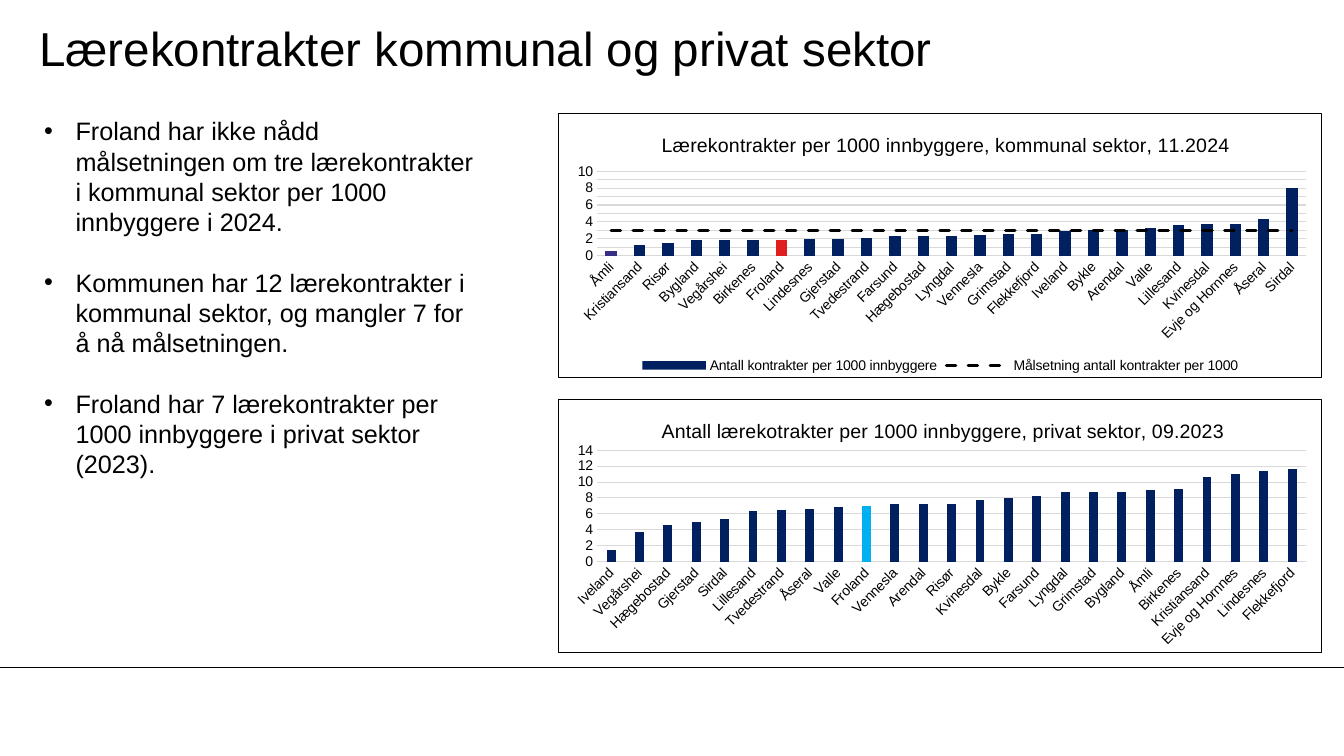
"""Build the slide on apprenticeship contracts in municipal and private sector."""
from lxml.etree import SubElement
from pptx import Presentation
from pptx.chart.data import CategoryChartData
from pptx.dml.color import RGBColor
from pptx.enum.chart import XL_CHART_TYPE, XL_LEGEND_POSITION, XL_MARKER_STYLE, XL_TICK_MARK
from pptx.enum.dml import MSO_LINE
from pptx.enum.shapes import MSO_CONNECTOR
from pptx.enum.text import MSO_ANCHOR, MSO_AUTO_SIZE, PP_ALIGN
from pptx.oxml import parse_xml
from pptx.oxml.ns import nsdecls, qn
from pptx.util import Cm, Pt

FONT, BLACK, GREY, NAVY = "Arial", "000000", "D9D9D9", "002060"
TITLE = "Lærekontrakter kommunal og privat sektor"
POINTS = [
    "Froland har ikke nådd målsetningen om tre lærekontrakter i kommunal sektor per 1000 innbyggere i 2024.",
    "Kommunen har 12 lærekontrakter i kommunal sektor, og mangler 7 for å nå målsetningen.",
    "Froland har 7 lærekontrakter per 1000 innbyggere i privat sektor (2023).",
]
PRIVATE = {
    "title": "Antall lærekotrakter per 1000 innbyggere, privat sektor, 09.2023",
    "name": "Series 1", "top": 10.06, "height": 6.4, "gap": 219, "overlap": -27,
    "max": 14, "unit": 2, "marks": {"Froland": "00B0F0"},
    "head": (0.13, 0.06), "plot": (0.05, 0.2, 0.93, 0.44),
    "rows": {
        "Iveland": 1.5, "Vegårshei": 3.7, "Hægebostad": 4.6, "Gjerstad": 5, "Sirdal": 5.4,
        "Lillesand": 6.3, "Tvedestrand": 6.5, "Åseral": 6.6, "Valle": 6.8, "Froland": 7,
        "Vennesla": 7.2, "Arendal": 7.3, "Risør": 7.3, "Kvinesdal": 7.8, "Bykle": 8,
        "Farsund": 8.2, "Lyngdal": 8.7, "Grimstad": 8.7, "Bygland": 8.8, "Åmli": 9,
        "Birkenes": 9.1, "Kristiansand": 10.6, "Evje og Hornnes": 11, "Lindesnes": 11.4,
        "Flekkefjord": 11.6,
    },
}
PUBLIC = {
    "title": "Lærekontrakter per 1000 innbyggere, kommunal sektor, 11.2024",
    "name": "Antall kontrakter per 1000 innbyggere",
    "top": 2.84, "height": 6.68, "gap": 150, "overlap": 0,
    "max": 10, "unit": 1, "marks": {"Åmli": "352D86", "Froland": "DF1F1D"},
    "head": (0.13, 0.06), "plot": (0.05, 0.22, 0.93, 0.32),
    "goal": ("Målsetning antall kontrakter per 1000", 3),
    "rows": {
        "Åmli": 0.6, "Kristiansand": 1.3, "Risør": 1.5, "Bygland": 1.8, "Vegårshei": 1.8,
        "Birkenes": 1.8, "Froland": 1.9, "Lindesnes": 2, "Gjerstad": 2, "Tvedestrand": 2.1,
        "Farsund": 2.3, "Hægebostad": 2.3, "Lyngdal": 2.3, "Vennesla": 2.5, "Grimstad": 2.6,
        "Flekkefjord": 2.6, "Iveland": 2.9, "Bykle": 3, "Arendal": 3, "Valle": 3.3,
        "Lillesand": 3.6, "Kvinesdal": 3.7, "Evje og Hornnes": 3.8, "Åseral": 4.3, "Sirdal": 8,
    },
}


def rgb(code):
    return RGBColor.from_string(code)


def style(font, size):
    font.name, font.size, font.bold = FONT, Pt(size), False
    font.color.rgb = rgb(BLACK)


def stroke(line, code, width=0.75):
    line.color.rgb = rgb(code)
    line.width = Pt(width)


def place(shape, left, top, width, height):
    shape.left, shape.top, shape.width, shape.height = map(Cm, (left, top, width, height))


def lay(node, index, inner, spots):
    for old in node.findall(qn("c:layout")):
        node.remove(old)
    layout = parse_xml(f"<c:layout {nsdecls('c')}/>")
    node.insert(index, layout)
    manual = SubElement(layout, qn("c:manualLayout"))
    if inner:
        SubElement(manual, qn("c:layoutTarget")).set("val", "inner")
    for tag in ("xMode", "yMode"):
        SubElement(manual, qn("c:" + tag)).set("val", "edge")
    for tag, spot in zip("xywh", spots):
        SubElement(manual, qn("c:" + tag)).set("val", str(spot))


def add_goal(chart):
    bars = chart.plots[0]
    group = parse_xml(
        f'<c:lineChart {nsdecls("c")}><c:grouping val="standard"/>'
        '<c:varyColors val="0"/><c:marker val="1"/></c:lineChart>')
    root = chart._chartSpace
    bar = root.xpath(".//c:barChart")[0]
    ser = bar.findall(qn("c:ser"))[1]
    for flag in ser.findall(qn("c:invertIfNegative")):
        ser.remove(flag)
    group.insert(2, ser)
    for axis in bar.findall(qn("c:axId")):
        SubElement(group, qn("c:axId")).set("val", axis.get("val"))
    bar.addnext(group)
    goal = chart.plots[1].series[0]
    goal.smooth = False
    goal.marker.style = XL_MARKER_STYLE.NONE
    stroke(goal.format.line, BLACK, 2.25)
    goal.format.line.dash_style = MSO_LINE.DASH
    ser.xpath("./c:spPr/a:ln")[0].set("cap", "rnd")


def add_graph(slide, spec_):
    rows = spec_["rows"]
    data = CategoryChartData()
    data.categories = list(rows)
    data.add_series(spec_["name"], list(rows.values()))
    if "goal" in spec_:
        name, level = spec_["goal"]
        data.add_series(name, [level] * len(rows))
    chart = slide.shapes.add_chart(
        XL_CHART_TYPE.COLUMN_CLUSTERED, Cm(14.07), Cm(spec_["top"]),
        Cm(19.25), Cm(spec_["height"]), data).chart
    style(chart.font, 10)
    root = chart._chartSpace
    root.find(qn("c:txPr")).addprevious(parse_xml(
        f'<c:spPr {nsdecls("c", "a")}><a:solidFill><a:srgbClr val="FFFFFF"/></a:solidFill>'
        f'<a:ln w="9525"><a:solidFill><a:srgbClr val="{BLACK}"/></a:solidFill></a:ln></c:spPr>'))

    chart.has_title = True
    frame = chart.chart_title.text_frame
    frame.text = spec_["title"]
    style(frame.paragraphs[0].font, 14)
    lay(root.xpath("./c:chart/c:title")[0], 1, False, spec_["head"])
    lay(root.xpath(".//c:plotArea")[0], 0, True, spec_["plot"])

    bars = chart.plots[0]
    bars.gap_width, bars.overlap = spec_["gap"], spec_["overlap"]
    bars.vary_by_categories = False
    fill = bars.series[0].format.fill
    fill.solid()
    fill.fore_color.rgb = rgb(NAVY)
    for town, code in spec_["marks"].items():
        fill = bars.series[0].points[list(rows).index(town)].format.fill
        fill.solid()
        fill.fore_color.rgb = rgb(code)

    for axis in (chart.category_axis, chart.value_axis):
        axis.major_tick_mark = axis.minor_tick_mark = XL_TICK_MARK.NONE
        style(axis.tick_labels.font, 10)
    stroke(chart.category_axis.format.line, GREY)
    root.xpath(".//c:catAx/c:txPr/a:bodyPr")[0].set("rot", "-2700000")
    axis = chart.value_axis
    axis.minimum_scale, axis.maximum_scale, axis.major_unit = 0, spec_["max"], spec_["unit"]
    axis.tick_labels.number_format = "0"
    axis.tick_labels.number_format_is_linked = False
    axis.format.line.fill.background()
    stroke(axis.major_gridlines.format.line, GREY)

    chart.has_legend = "goal" in spec_
    if chart.has_legend:
        chart.legend.position = XL_LEGEND_POSITION.BOTTOM
        chart.legend.include_in_layout = False
        style(chart.legend.font, 10)
        add_goal(chart)


def add_text(slide):
    title, body = slide.shapes.title, slide.placeholders[1]
    place(title, 0.99, 0.25, 28.2, 1.9)
    frame = title.text_frame
    frame.text = TITLE
    frame.vertical_anchor = MSO_ANCHOR.MIDDLE
    frame.margin_left = frame.margin_right = frame.margin_top = frame.margin_bottom = 0
    frame.auto_size = MSO_AUTO_SIZE.NONE
    frame.paragraphs[0].alignment = PP_ALIGN.LEFT
    style(frame.paragraphs[0].font, 34)

    place(body, 0.86, 2.79, 11.38, 10.26)
    frame = body.text_frame
    frame.text = "\n".join(POINTS)
    frame.auto_size = MSO_AUTO_SIZE.NONE
    for index, para in enumerate(frame.paragraphs):
        props = para._p.get_or_add_pPr()
        props.set("marL", str(Cm(0.79)))
        props.set("indent", str(-Cm(0.79)))
        SubElement(props, qn("a:buChar")).set("char", "•")
        para.line_spacing = Pt(21.6)
        para.space_before = Pt(21.6 if index else 0)
        style(para.font, 18)


def main():
    deck = Presentation()
    deck.slide_width, deck.slide_height = Cm(33.87), Cm(19.05)
    slide = deck.slides.add_slide(deck.slide_layouts[1])
    rule = slide.shapes.add_connector(
        MSO_CONNECTOR.STRAIGHT, 0, Cm(16.81), deck.slide_width, Cm(16.81))
    stroke(rule.line, BLACK)
    SubElement(rule._element.spPr, qn("a:effectLst"))
    add_text(slide)
    for graph in (PRIVATE, PUBLIC):
        add_graph(slide, graph)
    deck.save("out.pptx")


if __name__ == "__main__":
    main()
